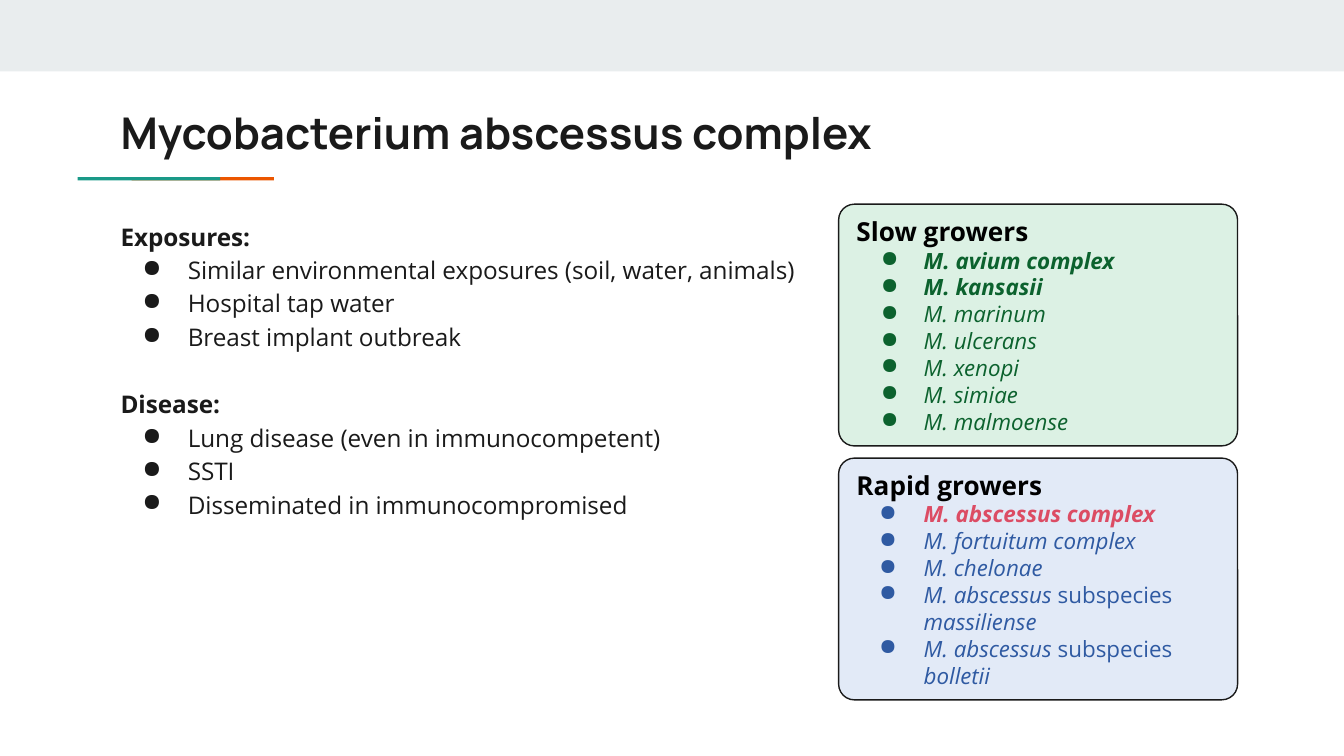
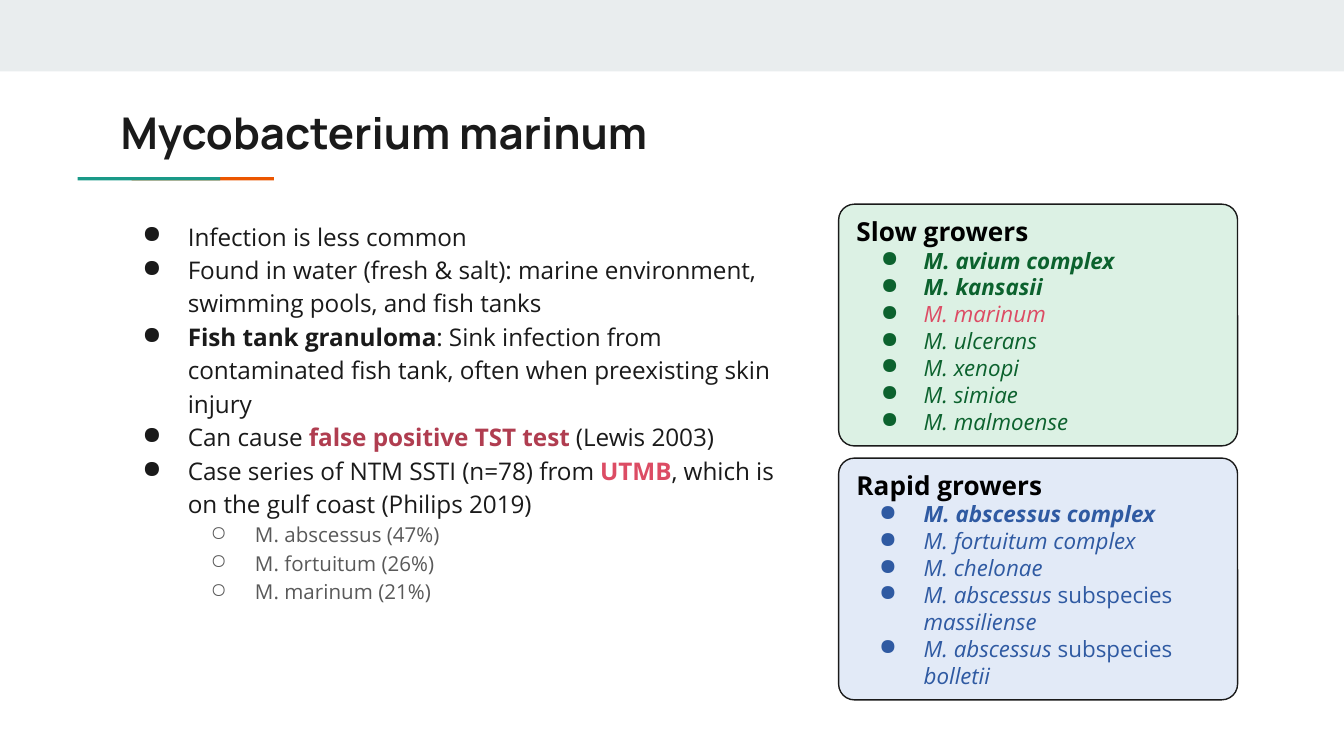
from collections import namedtuple
from dataclasses import dataclass

from lxml import etree
from pptx import Presentation
from pptx import util as u
from pptx.dml.color import RGBColor
from pptx.enum import shapes, text
from pptx.oxml import ns


@dataclass(frozen=True)
class Theme:
    # Colours
    ink: str = "1A1A1A"
    black: str = "000000"
    grey: str = "595959"
    band: str = "E9EDEE"
    teal: str = "1A9988"
    orange: str = "EB5600"
    green: str = "0C622E"
    pale_green: str = "DCF1E4"
    blue: str = "2F5AA2"
    pale_blue: str = "E2EAF7"
    focus: str = "DC4C64"
    warning: str = "B03D50"
    # Fonts and sizes
    title_font: str = "Manrope"
    body_font: str = "Open Sans"
    title_size: float = 23.4
    heading_size: int = 14
    body_size: int = 13
    species_size: int = 12
    detail_size: int = 11
    body_spacing: float = 1.15
    section_gap: int = 18


THEME = Theme()

Box = namedtuple("Box", "left top width height")
Run = namedtuple("Run", "text bold italic color", defaults=(None, None, None))
Bullet = namedtuple("Bullet", "char color left hang")
Line = namedtuple("Line", "kind runs")
Growers = namedtuple("Growers", "heading fill color hang species")

PAGE = Box(0, 0, 25.4, 14.29)
TITLE = Box(2.03, 1.75, 21.36, 1.5)
ACCENT = Box(1.47, 3.35, 2.69, 0.06)
BODY = Box(2.03, 3.86, 13.51, 8.2)
PANELS = Box(15.85, 3.86, 7.54, 9.37)
PANEL_GAP = 0.23
INSET = 0.25

SLOW = Growers("Slow growers", THEME.pale_green, THEME.green, 0.81, [
    [Run("M. avium complex", bold=True)],
    [Run("M. kansasii", bold=True)],
    [Run("M. marinum")],
    [Run("M. ulcerans")],
    [Run("M. xenopi")],
    [Run("M. simiae")],
    [Run("M. malmoense")],
])
RAPID = Growers("Rapid growers", THEME.pale_blue, THEME.blue, 0.84, [
    [Run("M. abscessus complex", bold=True)],
    [Run("M. fortuitum complex")],
    [Run("M. chelonae")],
    *[[Run("M. abscessus "), Run("subspecies ", italic=False), Run(name)]
      for name in ("massiliense", "bolletii")],
])

ABSCESSUS = [
    Line("heading", [Run("Exposures:")]),
    Line("point", [Run("Similar environmental exposures (soil, water, animals)")]),
    Line("point", [Run("Hospital tap water")]),
    Line("point", [Run("Breast implant outbreak")]),
    Line("heading", [Run("Disease:")]),
    Line("point", [Run("Lung disease (even in immunocompetent)")]),
    Line("point", [Run("SSTI")]),
    Line("point", [Run("Disseminated in immunocompromised")]),
]
MARINUM = [
    Line("point", [Run("Infection is less common")]),
    Line("point", [Run("Found in water (fresh & salt): marine environment, "
                       "swimming pools, and fish tanks")]),
    Line("point", [Run("Fish tank granuloma", bold=True),
                   Run(": Sink infection from contaminated fish tank, "
                       "often when preexisting skin injury")]),
    Line("point", [Run("Can cause "),
                   Run("false positive TST test", bold=True, color=THEME.warning),
                   Run(" (Lewis 2003)")]),
    Line("point", [Run("Case series of NTM SSTI (n=78) from "),
                   Run("UTMB", bold=True, color=THEME.focus),
                   Run(", which is on the gulf coast (Philips 2019)")]),
    Line("detail", [Run("M. abscessus (47%)")]),
    Line("detail", [Run("M. fortuitum (26%)")]),
    Line("detail", [Run("M. marinum (21%)")]),
]


def place(box):
    return [u.Cm(length) for length in box]


def add_block(slide, preset, box, fill, outline=None):
    block = slide.shapes.add_shape(preset, *place(box))
    block.shadow.inherit = False
    block.fill.solid()
    block.fill.fore_color.rgb = RGBColor.from_string(fill)
    if outline:
        block.line.color.rgb = RGBColor.from_string(outline)
        block.line.width = u.Pt(0.75)
    else:
        block.line.fill.background()
    return block


def prepare_frame(frame, anchor):
    frame.word_wrap = True
    frame.vertical_anchor = anchor
    frame.margin_left = frame.margin_right = u.Cm(INSET)
    frame.margin_top = frame.margin_bottom = u.Cm(INSET)
    return frame


def add_bullet(paragraph, bullet):
    props = paragraph._p.get_or_add_pPr()
    props.set("marL", str(u.Cm(bullet.left)))
    props.set("indent", str(-u.Cm(bullet.hang)))
    color = etree.SubElement(props, ns.qn("a:buClr"))
    etree.SubElement(color, ns.qn("a:srgbClr"), val=bullet.color)
    etree.SubElement(props, ns.qn("a:buChar"), char=bullet.char)


def write(paragraph, runs, size, color, font=THEME.body_font,
          bold=False, italic=False, bullet=None):
    paragraph.alignment = text.PP_ALIGN.LEFT
    if bullet:
        add_bullet(paragraph, bullet)
    paragraph.font.name = font
    paragraph.font.size = u.Pt(size)
    paragraph.font.bold = bold
    paragraph.font.italic = italic
    paragraph.font.color.rgb = RGBColor.from_string(color)
    for part in runs:
        run = paragraph.add_run()
        run.text = part.text
        if part.bold is not None:
            run.font.bold = part.bold
        if part.italic is not None:
            run.font.italic = part.italic
        if part.color:
            run.font.color.rgb = RGBColor.from_string(part.color)


def next_paragraph(frame, index):
    return frame.add_paragraph() if index else frame.paragraphs[0]


def add_header(slide, title):
    # Top band
    rect = shapes.MSO_SHAPE.RECTANGLE
    add_block(slide, rect, PAGE._replace(height=1.35), THEME.band)
    # Two-colour rule, teal overlapping orange
    add_block(slide, rect, ACCENT._replace(left=ACCENT.left + 1.02), THEME.orange)
    add_block(slide, rect, ACCENT, THEME.teal)
    # Title
    frame = prepare_frame(slide.shapes.add_textbox(*place(TITLE)).text_frame,
                          text.MSO_ANCHOR.TOP)
    write(frame.paragraphs[0], [Run(title)], THEME.title_size, THEME.ink,
          font=THEME.title_font, bold=True)


def add_body(slide, box, lines):
    frame = prepare_frame(slide.shapes.add_textbox(*place(box)).text_frame,
                          text.MSO_ANCHOR.TOP)
    styles = {
        "heading": dict(size=THEME.body_size, color=THEME.ink, bold=True),
        "point": dict(size=THEME.body_size, color=THEME.ink,
                      bullet=Bullet("●", THEME.ink, 1.27, 0.86)),
        "detail": dict(size=THEME.detail_size, color=THEME.grey,
                       bullet=Bullet("○", THEME.grey, 2.54, 0.84)),
    }
    for index, line in enumerate(lines):
        paragraph = next_paragraph(frame, index)
        paragraph.line_spacing = THEME.body_spacing
        if line.kind == "heading" and index:
            paragraph.space_before = u.Pt(THEME.section_gap)
        if line.kind == "detail":
            paragraph.level = 1
        write(paragraph, line.runs, **styles[line.kind])


def add_growers(slide, box, growers, focus):
    panel = add_block(slide, shapes.MSO_SHAPE.ROUNDED_RECTANGLE, box,
                      growers.fill, THEME.ink)
    panel.adjustments[0] = 0.065
    frame = prepare_frame(panel.text_frame, text.MSO_ANCHOR.MIDDLE)
    write(frame.paragraphs[0], [Run(growers.heading)], THEME.heading_size,
          THEME.black, bold=True)
    bullet = Bullet("●", growers.color, 1.27, growers.hang)
    for names in growers.species:
        # The species the slide is about stands out
        runs = [name._replace(color=THEME.focus) if name.text == focus else name
                for name in names]
        write(frame.add_paragraph(), runs, THEME.species_size, growers.color,
              italic=True, bullet=bullet)


def add_panels(slide, box, focus):
    height = (box.height - PANEL_GAP) / 2
    for row, growers in enumerate((SLOW, RAPID)):
        top = box.top + row * (height + PANEL_GAP)
        add_growers(slide, box._replace(top=top, height=height), growers, focus)


def add_species_slide(deck, title, lines, body, focus):
    slide = deck.slides.add_slide(deck.slide_layouts[6])
    add_header(slide, title)
    add_body(slide, body, lines)
    add_panels(slide, PANELS, focus)


def main():
    deck = Presentation()
    deck.slide_width, deck.slide_height = u.Cm(PAGE.width), u.Cm(PAGE.height)
    add_species_slide(deck, "Mycobacterium abscessus complex", ABSCESSUS,
                      BODY, "M. abscessus complex")
    add_species_slide(deck, "Mycobacterium marinum", MARINUM,
                      BODY._replace(height=9.09), "M. marinum")
    deck.save("out.pptx")


if __name__ == "__main__":
    main()
